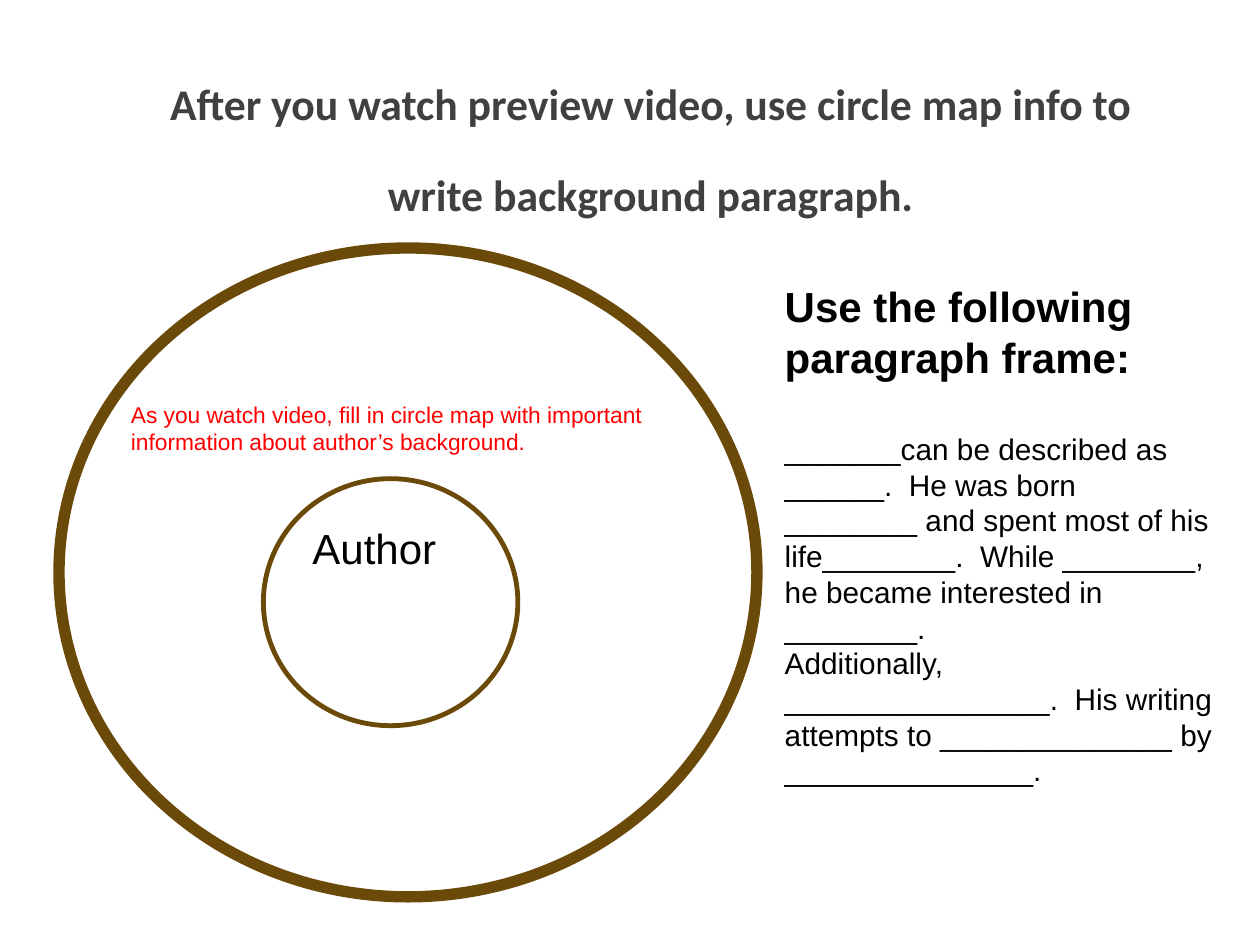
"""Build a slide with a circle map and a paragraph frame about an author."""
import pptx
import pptx.util
import pptx.dml.color
import pptx.enum.shapes
import pptx.enum.text

Cm, Pt = pptx.util.Cm, pptx.util.Pt
HUES = {"ring": "6B4908", "title": "404040", "text": "000000", "hint": "FF0000"}


def hue(name):
    return pptx.dml.color.RGBColor.from_string(HUES[name])


def write(box, lines, color, face="Arial"):
    box = slide.shapes.add_textbox(*[Cm(n) for n in box])
    frame = box.text_frame
    frame.word_wrap = True
    frame.text = "\n".join(text for text, size, bold in lines)
    for para, (text, size, bold) in zip(frame.paragraphs, lines):
        for run in para.runs:
            run.font.name = face
            run.font.size = Pt(size)
            run.font.bold = bold
            run.font.color.rgb = hue(color)
    return frame


deck = pptx.Presentation()
deck.slide_width, deck.slide_height = Cm(25.4), Cm(19.05)
slide = deck.slides.add_slide(deck.slide_layouts[6])

title = write(
    (3.02, 0.76, 20.19, 3.71),
    [("After you watch preview video, use circle map info to write background paragraph.", 25, True)],
    "title", "Calibri")
title.vertical_anchor = pptx.enum.text.MSO_ANCHOR.MIDDLE
title.paragraphs[0].alignment = pptx.enum.text.PP_ALIGN.CENTER
title.paragraphs[0].line_spacing = Pt(52)

rings = [((1.19, 5, 14.07, 13.08), 6.5), ((5.31, 9.65, 5.13, 4.98), 2.75)]
for box, width in rings:
    ring = slide.shapes.add_shape(
        pptx.enum.shapes.MSO_SHAPE.OVAL, *[Cm(n) for n in box])
    ring.shadow.inherit = False
    ring.fill.background()
    ring.line.color.rgb = hue("ring")
    ring.line.width = Pt(width)

author = write((6.05, 10.41, 4.37, 1.27), [("Author", 24, False)], "text")
hint = write(
    (2.39, 7.95, 11.38, 1.37),
    [("As you watch video, fill in circle map with important information about author’s background.", 13, False)],
    "hint")
story = write(
    (15.57, 5.54, 9.17, 9.83),
    [("Use the following paragraph frame:", 24, True),
     ("_______can be described as ______.  He was born", 17, False),
     ("________ and spent most of his life________.  While ________, he became interested in ________.", 17, False),
     ("Additionally, ________________.  His writing attempts to ______________ by _______________.", 17, False)],
    "text")
story.paragraphs[1].space_before = Pt(28)

for frame in (author, hint, story):
    frame.auto_size = pptx.enum.text.MSO_AUTO_SIZE.SHAPE_TO_FIT_TEXT

deck.save("out.pptx")
